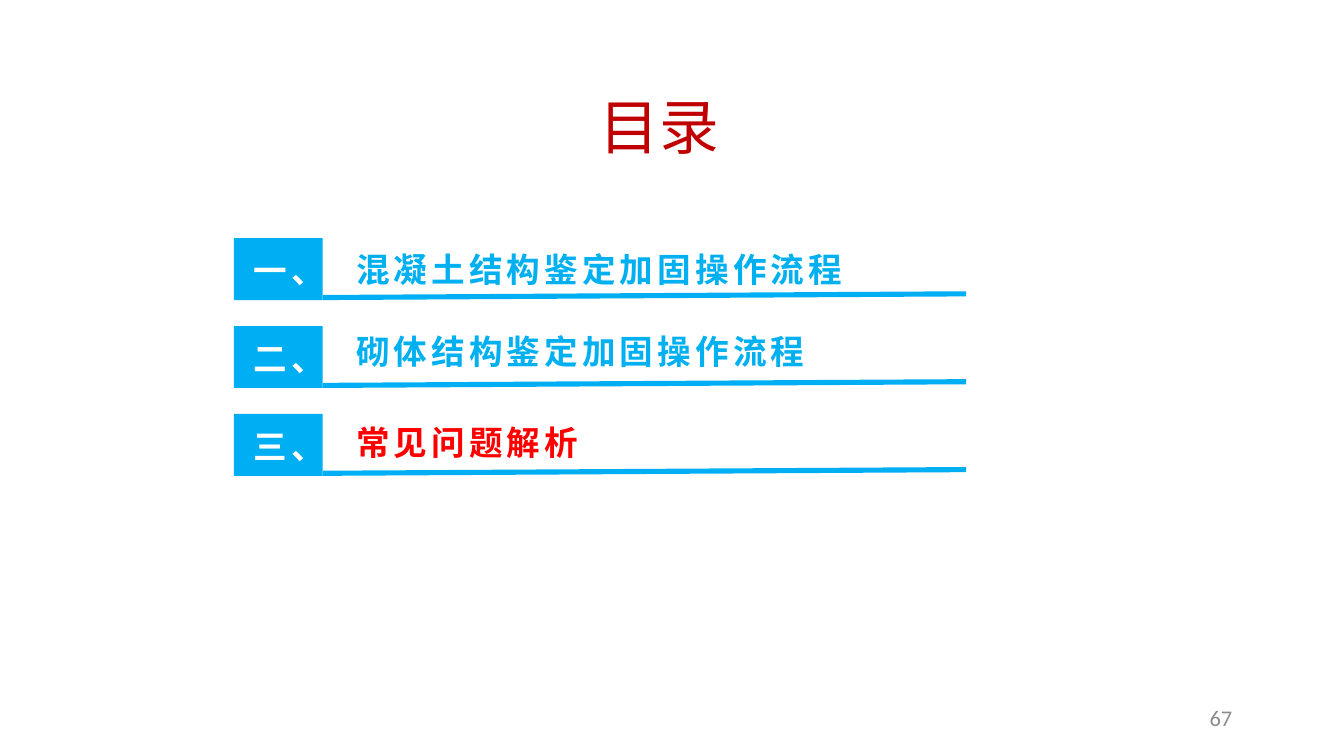
"""Build a contents slide with three numbered topics."""
from lxml.etree import SubElement
from pptx import Presentation
from pptx.dml.color import RGBColor
from pptx.enum.shapes import MSO_CONNECTOR as Connector, MSO_SHAPE as Shape
from pptx.enum.text import MSO_ANCHOR as Anchor, PP_ALIGN as Align
from pptx.oxml.ns import qn
from pptx.util import Cm, Pt

BLUE = RGBColor(0x00, 0xAE, 0xF3)
TOPIC_BLUE = RGBColor(0x00, 0xB0, 0xF0)
RED = RGBColor(0xFF, 0x00, 0x00)
DARK_RED = RGBColor(0xC0, 0x00, 0x00)
GRAY = RGBColor(0x8C, 0x8C, 0x8C)
WHITE = RGBColor(0xFF, 0xFF, 0xFF)
CHINESE = "Noto Sans CJK SC"

FIRST_TOP, ROW_PITCH = 4.5, 1.66
TOPICS = [
    ("一、", "混凝土结构鉴定加固操作流程", TOPIC_BLUE, 4.67, 11.96, 0.9),
    ("二、", "砌体结构鉴定加固操作流程", TOPIC_BLUE, 6.12, 10.77, None),
    ("三、", "常见问题解析", RED, 7.85, 11.96, None),
]


def add_text(slide, text, place, size, color, font=CHINESE, align=Align.LEFT,
             anchor=Anchor.TOP, bold=False, tracking=None, line_spacing=None):
    box = slide.shapes.add_textbox(*map(Cm, place))
    frame = box.text_frame
    frame.word_wrap = True
    frame.vertical_anchor = anchor
    para = frame.paragraphs[0]
    para.alignment = align
    para.line_spacing = line_spacing
    span = para.add_run()
    span.text = text
    para.font.size = Pt(size)
    para.font.bold = bold
    para.font.name = font
    para.font.color.rgb = color
    span.font.name = font
    properties = span.font._element
    SubElement(properties, qn("a:ea")).set("typeface", font)
    if tracking:
        properties.set("spc", str(round(tracking * 100)))


def add_block(slide, top):
    block = slide.shapes.add_shape(Shape.RECTANGLE, Cm(4.42), Cm(top), Cm(1.68), Cm(1.17))
    block.shadow.inherit = False
    block.fill.solid()
    block.fill.fore_color.rgb = BLUE
    block.line.fill.background()


def add_underline(slide, top):
    line = slide.shapes.add_connector(
        Connector.STRAIGHT, Cm(6.1), Cm(top + 1.12), Cm(18.26), Cm(top + 1.05))
    line.line.color.rgb = BLUE
    line.line.width = Pt(2.75)
    SubElement(line._element.spPr, qn("a:effectLst"))


def add_topic(slide, row, number, topic, color, topic_top, width, line_spacing):
    top = FIRST_TOP + row * ROW_PITCH
    add_text(slide, topic, (6.48, topic_top, width, 1.02), 18, color,
             bold=True, tracking=2.2, line_spacing=line_spacing)
    add_block(slide, top)
    add_text(slide, number, (4.55, top + 0.1, 1.55, 1.02), 18, WHITE,
             bold=True, tracking=2.2)
    add_underline(slide, top)


def main():
    deck = Presentation()
    deck.slide_width, deck.slide_height = Cm(25.4), Cm(14.28)
    slide = deck.slides.add_slide(deck.slide_layouts[6])
    add_text(slide, "67", (17.93, 13.23, 5.61, 0.66), 12, GRAY, font="Calibri",
             align=Align.RIGHT, anchor=Anchor.MIDDLE)
    for row, topic in enumerate(TOPICS):
        add_topic(slide, row, *topic)
    add_text(slide, "目录", (1.04, 1.17, 22.86, 2.39), 32, DARK_RED,
             align=Align.CENTER, anchor=Anchor.MIDDLE)
    deck.save("out.pptx")


if __name__ == "__main__":
    main()
